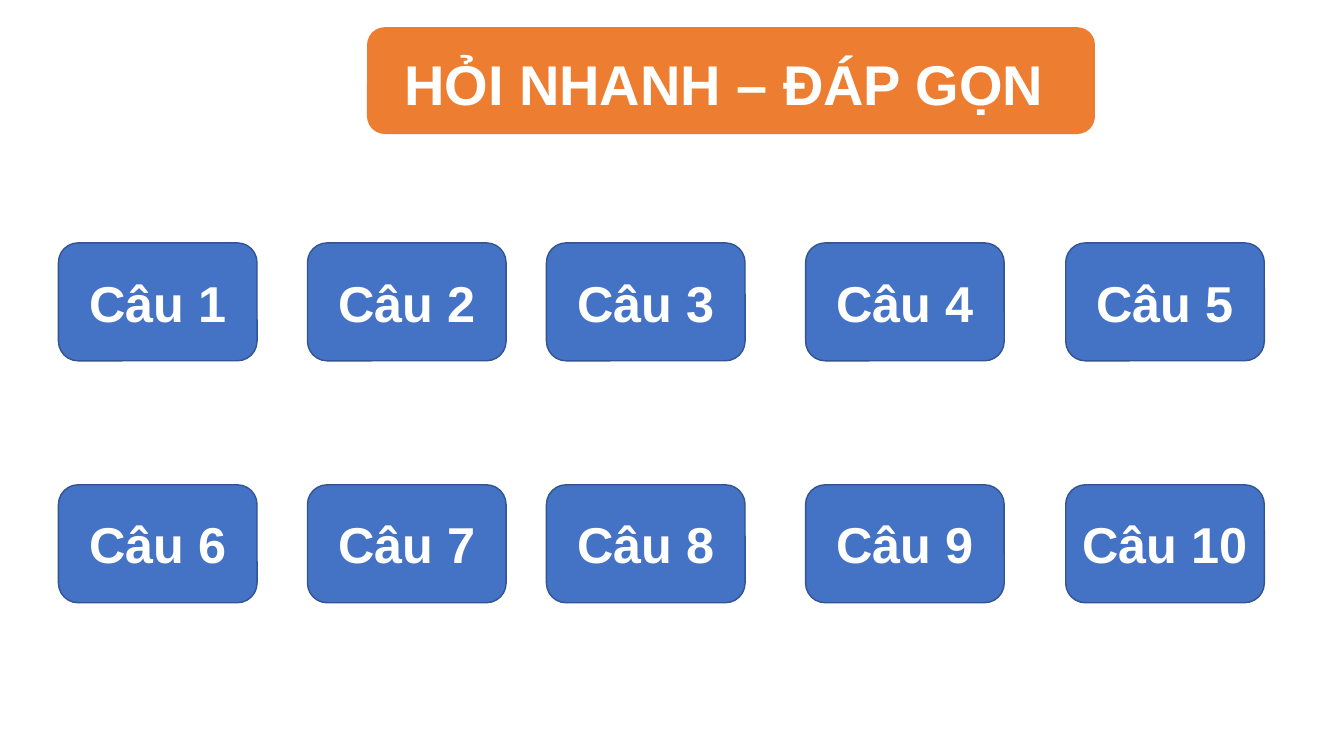
"""Build a quiz board slide: a title banner above two rows of question buttons."""
from dataclasses import dataclass
from itertools import product

from pptx import Presentation
from pptx.dml.color import RGBColor
from pptx.enum.shapes import MSO_SHAPE as Preset
from pptx.enum.text import MSO_ANCHOR as Anchor, MSO_AUTO_SIZE as AutoSize, PP_ALIGN as Align
from pptx.shapes.autoshape import Shape
from pptx.shapes.shapetree import GroupShapes, SlideShapes
from pptx.util import Emu, Pt

EMU_PER_PX = 9144
WHITE, BLUE, NAVY, ORANGE = "FFFFFF", "4472C4", "325491", "ED7D31"
COLUMN_LEFTS = (58, 305, 542, 799, 1057)
ROW_TOPS = (241, 481)


@dataclass(frozen=True)
class Box:
    """A rectangle in px."""
    left: int
    top: int
    width: int
    height: int

    def emu(self) -> tuple[Emu, Emu, Emu, Emu]:
        """Return the rectangle in EMU."""
        return px(self.left), px(self.top), px(self.width), px(self.height)


@dataclass(frozen=True)
class Question:
    """A numbered question button."""
    number: int
    box: Box


def px(length: int) -> Emu:
    """Convert px to EMU."""
    return Emu(length * EMU_PER_PX)


def colour(value: str) -> RGBColor:
    """Convert a hex string to a colour."""
    return RGBColor.from_string(value)


def add_panel(shapes: SlideShapes | GroupShapes, box: Box, fill: str) -> Shape:
    """Add a filled rounded rectangle without an outline."""
    panel = shapes.add_shape(Preset.ROUNDED_RECTANGLE, *box.emu())
    panel.shadow.inherit = False
    panel.fill.solid()
    panel.fill.fore_color.rgb = colour(fill)
    panel.line.fill.background()
    return panel


def write(holder: Shape, text: str, size: int, align: Align) -> None:
    """Write one bold white paragraph into a shape."""
    holder.text_frame.word_wrap = True
    paragraph = holder.text_frame.paragraphs[0]
    paragraph.text = text
    paragraph.alignment = align
    font = paragraph.font
    font.name, font.size, font.bold = "Arial", Pt(size), True
    font.color.rgb = colour(WHITE)


def add_question(shapes: SlideShapes, question: Question) -> None:
    """Add an outlined question button."""
    button = add_panel(shapes, question.box, BLUE)
    button.line.color.rgb = colour(NAVY)
    button.line.width = Pt(1)
    button.text_frame.vertical_anchor = Anchor.MIDDLE
    write(button, f"Câu {question.number}", 36, Align.CENTER)


def add_title(shapes: SlideShapes) -> None:
    """Add the grouped title banner."""
    banner = shapes.add_group_shape().shapes
    add_panel(banner, Box(364, 27, 722, 106), ORANGE)
    heading = banner.add_textbox(*Box(391, 44, 699, 77).emu())
    write(heading, "HỎI NHANH – ĐÁP GỌN", 40, Align.LEFT)
    heading.text_frame.auto_size = AutoSize.SHAPE_TO_FIT_TEXT


def main() -> None:
    """Build and save the slide."""
    deck = Presentation()
    deck.slide_width, deck.slide_height = px(1333), px(750)
    shapes = deck.slides.add_slide(deck.slide_layouts[6]).shapes
    for number, (top, left) in enumerate(product(ROW_TOPS, COLUMN_LEFTS), start=1):
        add_question(shapes, Question(number, Box(left, top, 197, 117)))
    add_title(shapes)
    deck.save("out.pptx")


if __name__ == "__main__":
    main()
